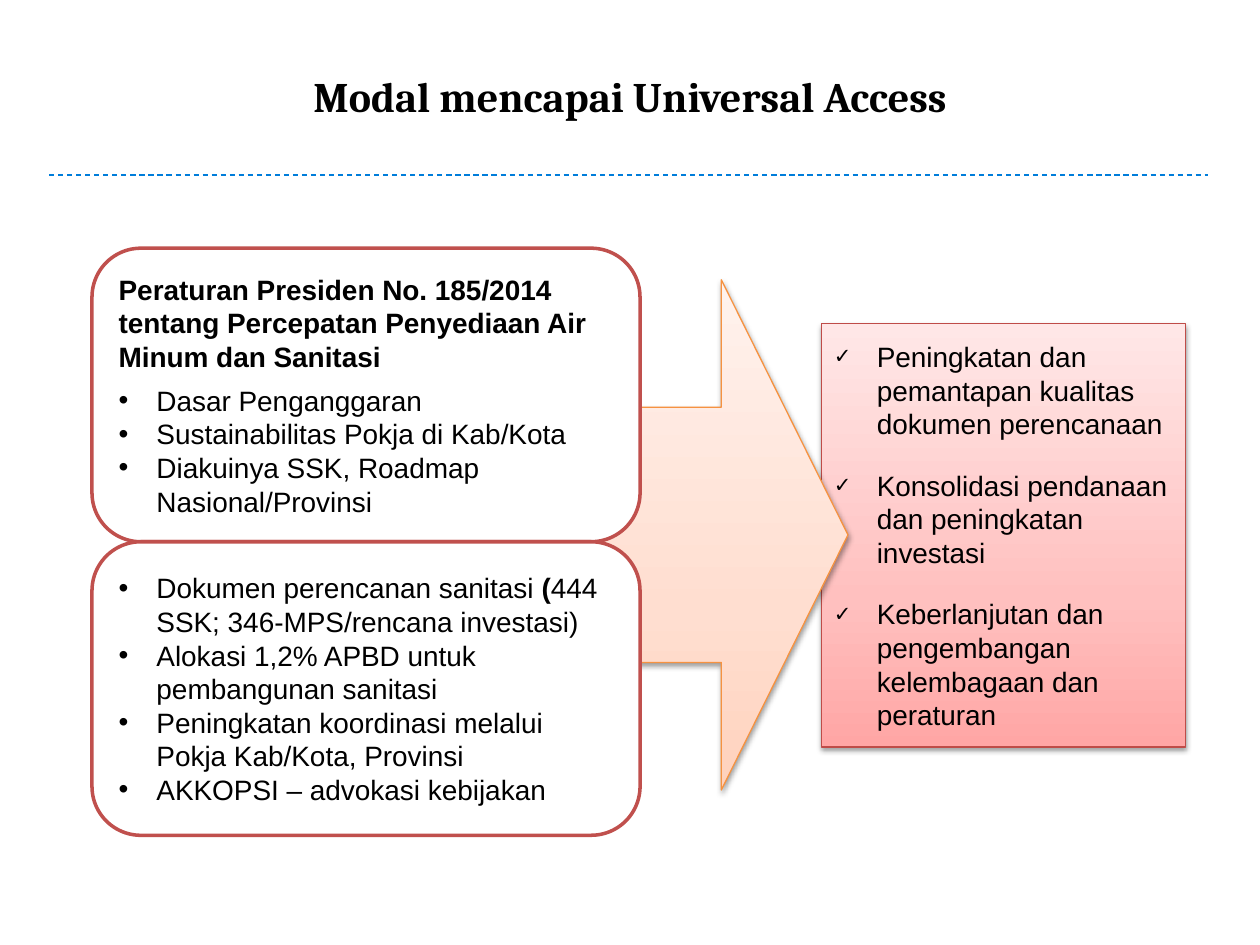
"""Build the slide on the assets for reaching universal access."""
from lxml import etree
from pptx import Presentation
from pptx.dml.color import RGBColor
from pptx.enum.dml import MSO_LINE
from pptx.enum.shapes import MSO_CONNECTOR, MSO_SHAPE
from pptx.enum.text import MSO_ANCHOR, PP_ALIGN
from pptx.oxml import parse_xml
from pptx.oxml.ns import nsdecls, qn
from pptx.util import Inches, Pt

STRAIGHT = MSO_CONNECTOR.STRAIGHT
RECTANGLE, ROUNDED, ARROW = MSO_SHAPE.RECTANGLE, MSO_SHAPE.ROUNDED_RECTANGLE, MSO_SHAPE.RIGHT_ARROW
MIDDLE, LEFT, CENTER, DASH = MSO_ANCHOR.MIDDLE, PP_ALIGN.LEFT, PP_ALIGN.CENTER, MSO_LINE.DASH

BLACK = RGBColor(0x00, 0x00, 0x00)
WHITE = RGBColor(0xFF, 0xFF, 0xFF)
BLUE = RGBColor(0x00, 0x7D, 0xDA)
RED = RGBColor(0xC0, 0x50, 0x4D)
DARK_RED = RGBColor(0xBF, 0x4C, 0x48)
ORANGE = RGBColor(0xF6, 0x92, 0x40)
PINKS = [RGBColor(0xFF, 0xA6, 0xA5), RGBColor(0xFF, 0xC0, 0xBF), RGBColor(0xFF, 0xE7, 0xE7)]
PEACHES = [RGBColor(0xFF, 0xD2, 0xBD), RGBColor(0xFF, 0xDE, 0xD0), RGBColor(0xFF, 0xF2, 0xED)]
STOPS = (0, 35, 100)

TITLE = "Modal mencapai Universal Access"
REGULATION = "Peraturan Presiden No. 185/2014 tentang Percepatan Penyediaan Air Minum dan Sanitasi"
REGULATION_POINTS = [
    "Dasar Penganggaran",
    "Sustainabilitas Pokja di Kab/Kota",
    "Diakuinya SSK, Roadmap Nasional/Provinsi",
]
PROGRESS_POINTS = [
    [("Dokumen perencanan sanitasi ", False), ("(", True),
     ("444 SSK; 346-MPS/rencana investasi)", False)],
    "Alokasi 1,2% APBD untuk pembangunan sanitasi",
    "Peningkatan koordinasi melalui Pokja Kab/Kota, Provinsi",
    "AKKOPSI – advokasi kebijakan",
]
OUTCOMES = [
    "Peningkatan dan pemantapan kualitas dokumen perencanaan",
    "Konsolidasi pendanaan dan peningkatan investasi",
    "Keberlanjutan dan pengembangan kelembagaan dan peraturan",
]
ASSETS = [(REGULATION, REGULATION_POINTS), (None, PROGRESS_POINTS)]

ASSET_LEFT, ASSET_TOP, ASSET_WIDTH, ASSET_HEIGHT = 0.73, 1.97, 4.35, 2.33
DOT = {"char": "•", "size": 100, "indent": 0.3}
CHECK = {"char": "✓", "size": 75, "indent": 0.34}


def write(paragraph, content, size=16, name="Arial", bold=False):
    runs = [(content, bold)] if isinstance(content, str) else content
    for text, is_bold in runs:
        run = paragraph.add_run()
        run.text = text
        run.font.color.rgb = BLACK
        for key, value in {"size": Pt(size), "name": name, "bold": is_bold}.items():
            setattr(run.font, key, value)


def add_bullet(paragraph, bullet):
    properties = paragraph._p.get_or_add_pPr()
    indent = Inches(bullet["indent"])
    properties.set("marL", str(indent))
    properties.set("indent", str(-indent))
    for tag, key, value in [("a:buSzPct", "val", str(bullet["size"] * 1000)),
                            ("a:buFont", "typeface", "Arial"),
                            ("a:buChar", "char", bullet["char"])]:
        etree.SubElement(properties, qn(tag)).set(key, value)


def write_list(shape, points, bullet, heading=None, gap=0):
    frame = shape.text_frame
    frame.vertical_anchor = MIDDLE
    paragraph = frame.paragraphs[0]
    if heading:
        write(paragraph, heading, bold=True)
        paragraph.alignment = LEFT
        paragraph.space_after = Pt(6)
    for index, point in enumerate(points):
        if heading or index:
            paragraph = frame.add_paragraph()
        add_bullet(paragraph, bullet)
        paragraph.alignment = LEFT
        if index and gap:
            paragraph.space_before = Pt(gap)
        write(paragraph, point)


def add_box(slide, preset, box, line_color, line_width):
    shape = slide.shapes.add_shape(preset, *map(Inches, box))
    shape.shadow.inherit = False
    shape.line.color.rgb = line_color
    shape.line.width = Pt(line_width)
    return shape


def add_glow_box(slide, preset, box, line_color, colors):
    shape = add_box(slide, preset, box, line_color, 0.75)
    stops = "".join(f'<a:gs pos="{stop * 1000}"><a:srgbClr val="{color}"/></a:gs>'
                    for stop, color in zip(STOPS, colors))
    properties = shape._element.spPr
    properties.find(qn("a:prstGeom")).addnext(parse_xml(
        f'<a:gradFill {nsdecls("a")} rotWithShape="1"><a:gsLst>{stops}</a:gsLst>'
        '<a:lin ang="16200000" scaled="0"/></a:gradFill>'))
    properties.find(qn("a:effectLst")).append(parse_xml(
        f'<a:outerShdw {nsdecls("a")} blurRad="{Pt(3.1)}" dist="{Pt(1.6)}" dir="5400000" '
        'rotWithShape="0"><a:srgbClr val="000000"><a:alpha val="38000"/></a:srgbClr></a:outerShdw>'))
    return shape


def add_title(slide):
    title = slide.shapes.title
    place = {"left": 0, "top": 0.32, "width": 10, "height": 0.88}
    for key, value in place.items():
        setattr(title, key, Inches(value))
    title.text_frame.vertical_anchor = MIDDLE
    paragraph = title.text_frame.paragraphs[0]
    paragraph.alignment = CENTER
    write(paragraph, TITLE, size=24, name="Cambria", bold=True)


def add_rule(slide):
    rule = slide.shapes.add_connector(STRAIGHT, *map(Inches, (0.39, 1.39, 9.59, 1.39)))
    rule.line.color.rgb = BLUE
    rule.line.width = Pt(0.75)
    rule.line.dash_style = DASH
    etree.SubElement(rule._element.spPr, qn("a:effectLst"))


def main():
    deck = Presentation()
    deck.slide_width, deck.slide_height = Inches(10), Inches(7.5)
    slide = deck.slides.add_slide(deck.slide_layouts[5])
    add_rule(slide)
    add_title(slide)
    outcome = add_glow_box(slide, RECTANGLE, (6.52, 2.57, 2.89, 3.36), DARK_RED, PINKS)
    write_list(outcome, OUTCOMES, CHECK, gap=16)
    add_glow_box(slide, ARROW, (4.72, 2.22, 2.01, 4.05), ORANGE, PEACHES)
    for row, (heading, points) in enumerate(ASSETS):
        box = (ASSET_LEFT, ASSET_TOP + row * ASSET_HEIGHT, ASSET_WIDTH, ASSET_HEIGHT)
        asset = add_box(slide, ROUNDED, box, RED, 2)
        asset.fill.solid()
        asset.fill.fore_color.rgb = WHITE
        write_list(asset, points, DOT, heading)
    deck.save("out.pptx")


if __name__ == "__main__":
    main()
